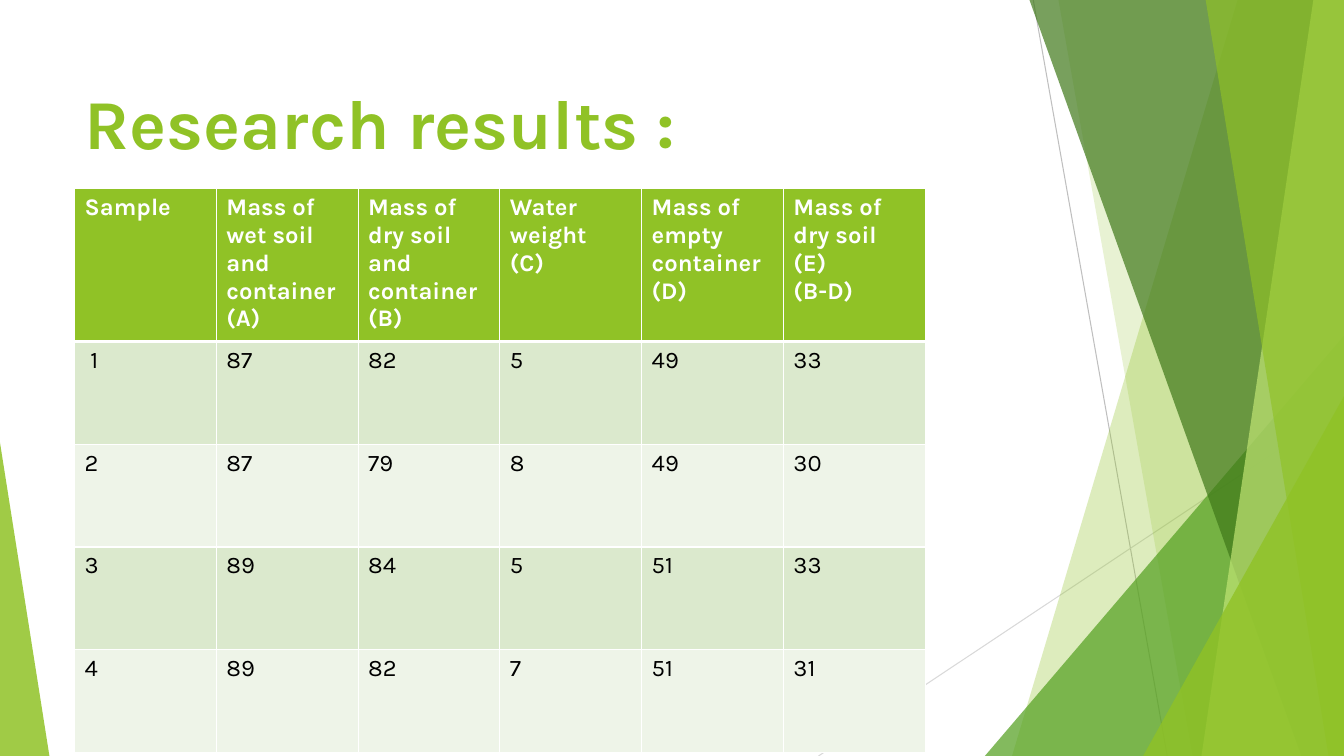
"""Build the research results slide: a soil table beside green facets."""
from lxml import etree
from pptx import Presentation
from pptx import util as u
from pptx.dml.color import RGBColor
from pptx.enum import shapes, text
from pptx.oxml import ns

HUES = {"lime": "90C226", "leaf": "54A021", "moss": "3F7819", "pale": "C0E474",
        "mid": "BFBFBF", "light": "D9D9D9", "white": "FFFFFF", "black": "000000",
        "odd": "DBE9CD", "even": "EEF4E8"}
FONT = "Karla"
TITLE = "Research results :"
HEADS = ["Sample", "Mass of wet soil and container (A)",
         "Mass of dry soil and container\n(B)", "Water weight\n(C)",
         "Mass of empty container\n(D)", "Mass of dry soil\n(E)\n(B-D)"]
ROWS = [[" 1", "87", "82", "5", "49", "33"],
        ["2", "87", "79", "8", "49", "30"],
        ["3", "89", "84", "5", "51", "33"],
        ["4", "89", "82", "7", "51", "31"]]

# Lengths are percentages of the slide's width and height.
LINES = [((76.88, 0), (86.85, 100), "mid"), ((100, 53.73), (60.9, 100), "light")]
FACETS = [("band", 92.1, 75.3, "lime", 30),
          ("band", 78.75, 88.73, "lime", 20),
          ("wedge", (73.28, 44.4, 26.72, 55.6), 1, "leaf", 72),
          ("band", 76.58, 96.83, "moss", 70),
          ("band", 97.73, 89.4, "pale", 70),
          ("band", 89.7, 98.85, "lime", 65),
          ("wedge", (85.05, 52.4, 14.95, 47.6), 1, "lime", 80),
          ("wedge", (0, 58.53, 3.68, 41.47), 0, "lime", 85)]
TOP = -0.1
HEAD_BOX = (5.55, 8.93, 70.5, 19.2)
GRID = (5.55, 24.93)
COL, HEAD, ROW = 10.55, 18.27, 13.6

deck = Presentation()
deck.slide_width, deck.slide_height = u.Inches(13.333), u.Inches(7.5)
slide = deck.slides.add_slide(deck.slide_layouts[6])
parts = slide.shapes


def wide(n):
    return round(deck.slide_width * n / 100)


def high(n):
    return round(deck.slide_height * n / 100)


def place(box):
    return [f(n) for f, n in zip((wide, high, wide, high), box)]


def tint(name):
    return RGBColor.from_string(HUES[name])


def write(frame, words, size=17, hue="black", bold=False):
    frame.word_wrap = True
    for i, line in enumerate(words.split("\n")):
        para = frame.add_paragraph() if i else frame.paragraphs[0]
        run = para.add_run()
        run.text = line
        run.font.name, run.font.size, run.font.bold = FONT, u.Pt(size), bold
        run.font.color.rgb = tint(hue)


def facet(kind, a, b, hue, alpha):
    if kind == "band":
        pen = parts.build_freeform(wide(a), high(TOP), scale=1.0)
        pen.add_line_segments([(wide(x), high(y)) for x, y in
                               ((100, TOP), (100, 100), (b, 100))], close=True)
        shape = pen.convert_to_shape()
    else:
        shape = parts.add_shape(shapes.MSO_SHAPE.ISOSCELES_TRIANGLE, *place(a))
        shape.adjustments[0] = b
    shape.shadow.inherit = False
    shape.line.fill.background()
    shape.fill.solid()
    shape.fill.fore_color.rgb = tint(hue)
    color = shape.fill._xPr.find(".//" + ns.qn("a:srgbClr"))
    etree.SubElement(color, ns.qn("a:alpha"), val=str(alpha * 1000))


def rule(start, end, hue):
    line = parts.add_connector(shapes.MSO_CONNECTOR.STRAIGHT, *place(start + end))
    line.line.width, line.line.color.rgb = u.Pt(0.75), tint(hue)
    etree.SubElement(line._element.spPr, ns.qn("a:effectLst"))


def edge(cell, row):
    props = cell._tc.get_or_add_tcPr()
    widths = {"L": 1, "R": 1, "T": 3 if row == 1 else 1, "B": 1 if row else 3}
    for i, (side, points) in enumerate(widths.items()):
        line = etree.Element(ns.qn("a:ln" + side), w=str(u.Pt(points)))
        fill = etree.SubElement(line, ns.qn("a:solidFill"))
        etree.SubElement(fill, ns.qn("a:srgbClr"), val=HUES["white"])
        props.insert(i, line)


for line in LINES:
    rule(*line)
for item in FACETS:
    facet(*item)

title = parts.add_textbox(*place(HEAD_BOX)).text_frame
title.vertical_anchor = text.MSO_ANCHOR.TOP
title.margin_top = u.Inches(0.12)
write(title, TITLE, size=50, hue="lime", bold=True)

data = [HEADS] + ROWS
box = GRID + (COL * len(HEADS), HEAD + ROW * len(ROWS))
table = parts.add_table(len(data), len(HEADS), *place(box)).table
for col in table.columns:
    col.width = wide(COL)
for r, row in enumerate(data):
    table.rows[r].height = high(ROW if r else HEAD)
    for c, words in enumerate(row):
        cell = table.cell(r, c)
        cell.fill.solid()
        cell.fill.fore_color.rgb = tint(("odd" if r % 2 else "even") if r else "lime")
        edge(cell, r)
        write(cell.text_frame, words, hue="black" if r else "white", bold=not r)

deck.save("out.pptx")
